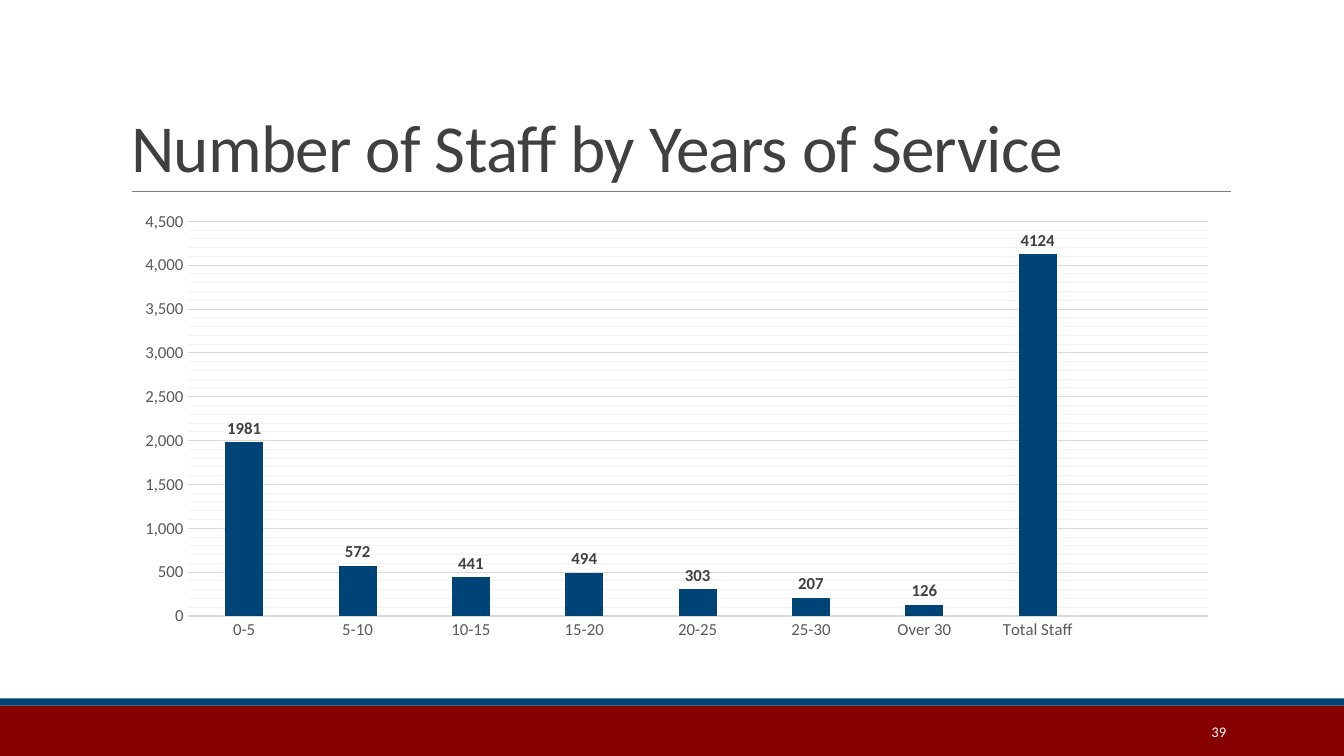
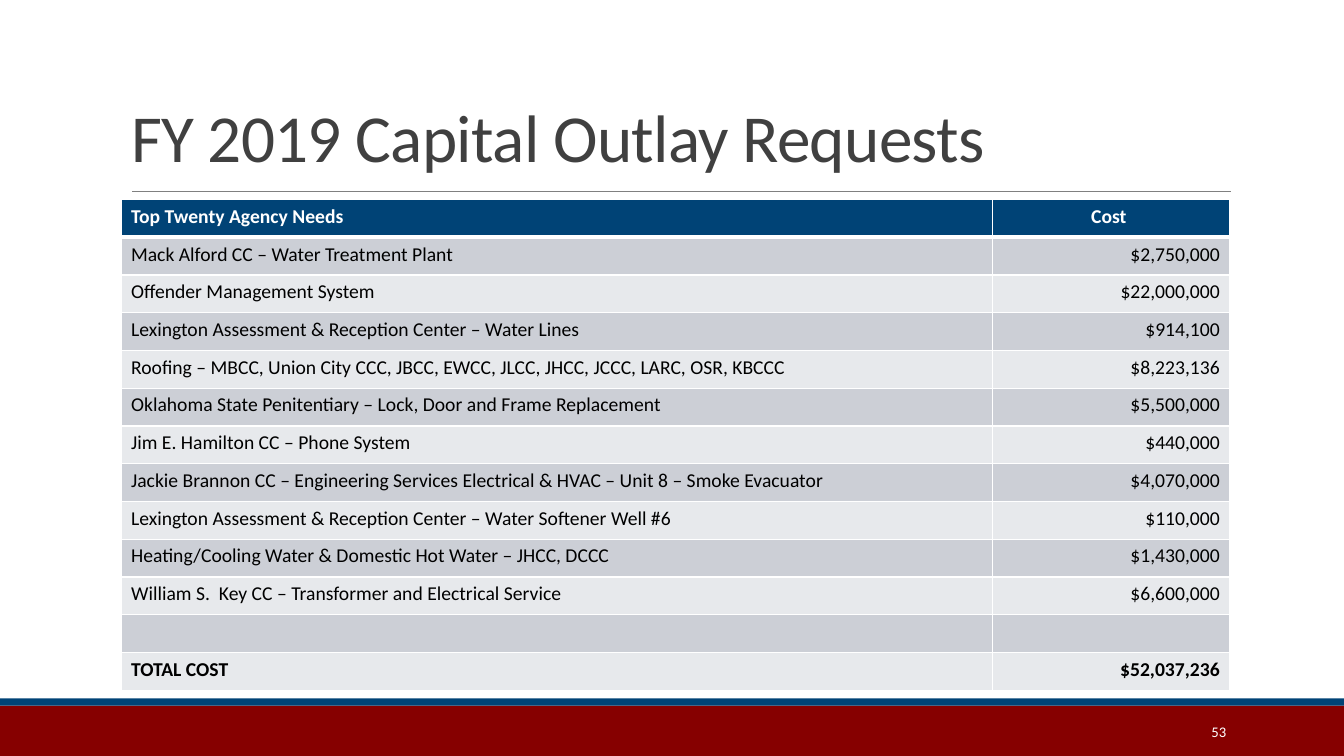
"""Build a staff chart slide and a capital request table slide."""
from lxml import etree
from pptx import Presentation
from pptx import util as u
from pptx.chart.data import CategoryChartData
from pptx.dml.color import RGBColor
from pptx.enum import chart as ch, shapes, text
from pptx.oxml import parse_xml
from pptx.oxml.ns import nsdecls, qn

FONT = "Calibri"
COLORS = {
    "navy": "004376", "maroon": "860000", "rule": "808080", "title": "404040",
    "axis": "595959", "grid": "D9D9D9", "minor": "F2F2F2", "white": "FFFFFF",
    "black": "000000", "band_dark": "CCCFD6", "band_light": "E7E9EC",
}
LEFT, WIDTH = 1.2, 11
SLIDE_W, SLIDE_H = 13.33, 7.5

STAFF = {
    "0-5": 1981, "5-10": 572, "10-15": 441, "15-20": 494, "20-25": 303,
    "25-30": 207, "Over 30": 126, "Total Staff": 4124, "": None,
}
REQUESTS = [
    ("Top Twenty Agency Needs", "Cost "),
    ("Mack Alford CC – Water Treatment Plant", "$2,750,000"),
    ("Offender Management System", "$22,000,000"),
    ("Lexington Assessment & Reception Center – Water Lines", "$914,100"),
    ("Roofing – MBCC, Union City CCC, JBCC, EWCC, JLCC, JHCC, JCCC, LARC, OSR, KBCCC",
     "$8,223,136"),
    ("Oklahoma State Penitentiary – Lock, Door and Frame Replacement", "$5,500,000"),
    ("Jim E. Hamilton CC – Phone System", "$440,000"),
    ("Jackie Brannon CC – Engineering Services Electrical & HVAC – Unit 8 – Smoke Evacuator",
     "$4,070,000"),
    ("Lexington Assessment & Reception Center – Water Softener Well #6", "$110,000"),
    ("Heating/Cooling Water & Domestic Hot Water – JHCC, DCCC", "$1,430,000"),
    ("William S.  Key CC – Transformer and Electrical Service", "$6,600,000"),
    ("", ""),
    ("TOTAL COST", "$52,037,236"),
]


def rgb(name):
    """Return the named colour."""
    return RGBColor.from_string(COLORS[name])


def box(*lengths):
    """Convert a position and size to lengths in inches."""
    return [u.Inches(n) for n in lengths]


def format_font(font, size, color, bold=False):
    """Set face, size, colour and weight of a font."""
    font.name, font.size, font.bold = FONT, u.Pt(size), bold
    font.color.rgb = rgb(color)


def write_text(tf, words, size=14, color="black", bold=False, align="LEFT",
               spacing=None, tracking=None):
    """Write one formatted paragraph into a text frame."""
    p = tf.paragraphs[0]
    p.alignment = getattr(text.PP_ALIGN, align)
    if spacing:
        p.line_spacing = spacing
    if not words:
        etree.SubElement(p._p, qn("a:endParaRPr"), sz=str(size * 100))
        return
    r = p.add_run()
    r.text = words
    format_font(r.font, size, color, bold)
    if tracking:
        r._r.get_or_add_rPr().set("spc", str(round(tracking * 100)))


def add_band(slide, top, height, color):
    """Add a full-width colour band."""
    sp = slide.shapes.add_shape(shapes.MSO_SHAPE.RECTANGLE,
                                *box(0, top, SLIDE_W, height))
    sp.shadow.inherit = False
    sp.fill.solid()
    sp.fill.fore_color.rgb = rgb(color)
    sp.line.fill.background()


def add_rule(slide):
    """Add the thin line below the title."""
    line = slide.shapes.add_connector(shapes.MSO_CONNECTOR.STRAIGHT,
                                      *box(1.31, 1.9, 12.21, 1.9))
    line.line.color.rgb = rgb("rule")
    line.line.width = u.Pt(0.5)
    etree.SubElement(line._element.spPr, qn("a:effectLst"))


def add_slide(prs, title, number, title_top):
    """Add a slide with its title, bands, rule and page number."""
    slide = prs.slides.add_slide(prs.slide_layouts[5])
    add_band(slide, 7, 0.5, "maroon")
    add_band(slide, 6.93, 0.07, "navy")
    add_rule(slide)
    sp = slide.shapes.title
    sp.left, sp.top, sp.width, sp.height = box(LEFT, title_top, WIDTH, 1.59)
    tf = sp.text_frame
    tf.auto_size = text.MSO_AUTO_SIZE.NONE
    tf.vertical_anchor = text.MSO_ANCHOR.BOTTOM
    write_text(tf, title, size=48, color="title", spacing=0.85, tracking=-0.5)
    tf = slide.shapes.add_textbox(*box(10.83, 7.06, 1.43, 0.4)).text_frame
    tf.word_wrap = True
    tf.vertical_anchor = text.MSO_ANCHOR.MIDDLE
    write_text(tf, str(number), size=10.5, color="white", align="RIGHT")
    return slide


def format_line(line, color):
    """Format an axis or grid line."""
    line.color.rgb = rgb(color)
    line.width = u.Pt(0.75)


def add_minor_gridlines(axis, color):
    """Show the minor gridlines of an axis in one colour."""
    axis.has_minor_gridlines = True
    axis._element.find(qn("c:minorGridlines")).append(parse_xml(
        f'<c:spPr {nsdecls("c", "a")}><a:ln w="{u.Pt(0.75)}"><a:solidFill>'
        f'<a:srgbClr val="{COLORS[color]}"/></a:solidFill></a:ln></c:spPr>'))


def format_axes(chart):
    """Format both axes and the gridlines."""
    cat, val = chart.category_axis, chart.value_axis
    for axis in (cat, val):
        axis.major_tick_mark = axis.minor_tick_mark = ch.XL_TICK_MARK.NONE
        format_font(axis.tick_labels.font, 12, "axis")
    format_line(cat.format.line, "grid")
    val.format.line.fill.background()
    val.minimum_scale, val.maximum_scale = 0, 4500
    val.major_unit, val.minor_unit = 500, 100
    val.has_major_gridlines = True
    format_line(val.major_gridlines.format.line, "grid")
    add_minor_gridlines(val, "minor")
    val.tick_labels.number_format = "#,##0"
    val.tick_labels.number_format_is_linked = False


def place_plot(chart, **fractions):
    """Fix the inner plot area as fractions of the chart."""
    area = chart._chartSpace.chart.plotArea
    for old in area.findall(qn("c:layout")):
        area.remove(old)
    layout = parse_xml(f'<c:layout {nsdecls("c")}><c:manualLayout/></c:layout>')
    values = {"layoutTarget": "inner", "xMode": "edge", "yMode": "edge", **fractions}
    for tag, value in values.items():
        etree.SubElement(layout[0], qn(f"c:{tag}"), val=str(value))
    area.insert(0, layout)


def add_column_chart(slide, values):
    """Add a labelled column chart."""
    data = CategoryChartData()
    data.categories = list(values)
    data.add_series("Series 1", list(values.values()))
    chart = slide.shapes.add_chart(ch.XL_CHART_TYPE.COLUMN_CLUSTERED,
                                   *box(LEFT, 2.02, WIDTH, 4.4), data).chart
    chart.has_title = chart.has_legend = False
    format_font(chart.font, 10, "black")
    plot = chart.plots[0]
    plot.gap_width, plot.vary_by_categories = 199, False
    fill = plot.series[0].format.fill
    fill.solid()
    fill.fore_color.rgb = rgb("navy")
    plot.has_data_labels = True
    labels = plot.data_labels
    labels.show_value = True
    labels.position = ch.XL_LABEL_POSITION.OUTSIDE_END
    format_font(labels.font, 12, "title", bold=True)
    format_axes(chart)
    place_plot(chart, x=0.06, y=0.04, w=0.92, h=0.89)


def format_cell(cell, color, top=1, bottom=1):
    """Set white borders and the fill of a table cell."""
    tcPr = cell._tc.get_or_add_tcPr()
    for side, width in {"L": 1, "R": 1, "T": top, "B": bottom}.items():
        tcPr.append(parse_xml(
            f'<a:ln{side} {nsdecls("a")} w="{u.Pt(width)}"><a:solidFill>'
            f'<a:srgbClr val="{COLORS["white"]}"/></a:solidFill></a:ln{side}>'))
    cell.fill.solid()
    cell.fill.fore_color.rgb = rgb(color)


def add_cost_table(slide, rows):
    """Add a banded table with a header and a total row."""
    height = 4.87
    table = slide.shapes.add_table(len(rows), 2,
                                   *box(LEFT, 1.98, WIDTH, height)).table
    for col, width in zip(table.columns, (8.64, 2.36)):
        col.width = u.Inches(width)
    for i, row in enumerate(rows):
        table.rows[i].height = u.Inches(height / len(rows))
        header = i == 0
        fill = "navy" if header else "band_dark" if i % 2 else "band_light"
        aligns = ("LEFT", "CENTER" if header else "RIGHT")
        for j, (words, align) in enumerate(zip(row, aligns)):
            cell = table.cell(i, j)
            format_cell(cell, fill, top=3 if i == 1 else 1, bottom=3 if header else 1)
            write_text(cell.text_frame, words, align=align,
                       color="white" if header else "black",
                       bold=i in (0, len(rows) - 1))


def main():
    """Build and save the presentation."""
    prs = Presentation()
    prs.slide_width, prs.slide_height = box(SLIDE_W, SLIDE_H)
    add_column_chart(
        add_slide(prs, "Number of Staff by Years of Service", 39, 0.31), STAFF)
    add_cost_table(
        add_slide(prs, "FY 2019 Capital Outlay Requests", 53, 0.21), REQUESTS)
    prs.save("out.pptx")


if __name__ == "__main__":
    main()
